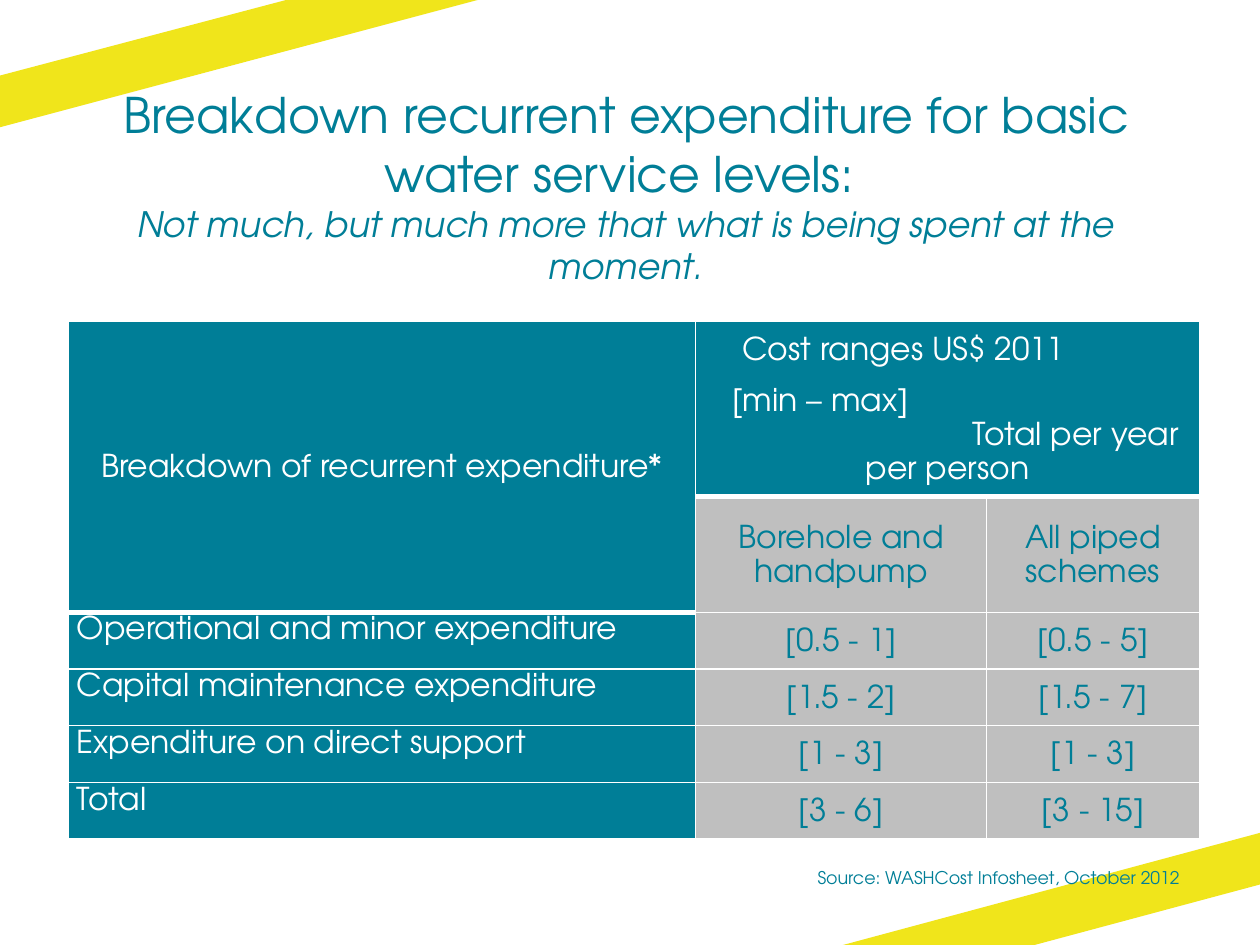
"""Build the slide on recurrent expenditure for basic water service levels."""
import pptx
import pptx.util
import pptx.dml.color
import pptx.enum.text
import pptx.oxml
import pptx.oxml.ns

Inches, Pt = pptx.util.Inches, pptx.util.Pt
RGBColor = pptx.dml.color.RGBColor
ALIGN, ANCHOR = pptx.enum.text.PP_ALIGN, pptx.enum.text.MSO_ANCHOR
TEAL = RGBColor(0x00, 0x7E, 0x97)
YELLOW = RGBColor(0xF0, 0xE5, 0x1B)
GREY = RGBColor(0xBF, 0xBF, 0xBF)
WHITE = RGBColor(0xFF, 0xFF, 0xFF)
FONT = "TeX Gyre Adventor"
WIDTH, HEIGHT = 10, 7.5

BANDS = [
    [(2.27, 0), (0, 0.6), (0, 1.01), (3.79, 0)],
    [(6.69, HEIGHT), (8.21, HEIGHT), (WIDTH, 7.02), (WIDTH, 6.61)],
]
TITLE = [
    ("Breakdown recurrent expenditure for basic water service levels: ", 28, False),
    ("Not much, but much more that what is being spent at the moment.", 20, True),
]
SOURCE = "Source: WASHCost Infosheet, October 2012"
ROW_HEADER = "Breakdown of recurrent expenditure*"
COST_HEADER = [
    ("Cost ranges US$ 2011", ALIGN.LEFT, 0.37, 10),
    ("[min – max]", ALIGN.LEFT, 0.29, 0),
    ("Total per year", ALIGN.LEFT, 2.2, 0),
    ("per person", ALIGN.CENTER, 0, 10),
]
SCHEMES = ["Borehole and handpump", "All piped schemes"]
COSTS = [
    ("Operational and minor expenditure", "[0.5 - 1]", "[0.5 - 5]"),
    ("Capital maintenance expenditure", "[1.5 - 2]", "[1.5 - 7]"),
    ("Expenditure on direct support", "[1 - 3]", "[1 - 3]"),
    ("Total", "[3 - 6]", "[3 - 15]"),
]
COLUMNS = [4.98, 2.31, 1.69]
ROWS = [1.39, 0.92] + [0.45] * len(COSTS)


def add_run(p, text, size, color, italic=False):
    r = p.add_run()
    r.text = text
    r.font.name, r.font.size, r.font.italic = FONT, Pt(size), italic
    r.font.color.rgb = color


def add_band(s, points):
    corners = [(Inches(x), Inches(y)) for x, y in points]
    builder = s.shapes.build_freeform(*corners[0])
    builder.add_line_segments(corners[1:], close=True)
    sp = builder.convert_to_shape()
    sp.shadow.inherit = False
    sp.fill.solid()
    sp.fill.fore_color.rgb = YELLOW
    sp.line.fill.background()


def add_text_frame(s, left, top, width, height):
    tf = s.shapes.add_textbox(*map(Inches, (left, top, width, height))).text_frame
    tf.word_wrap = True
    return tf


def set_borders(cell, bottom):
    tc_pr = cell._tc.get_or_add_tcPr()
    for index, (side, width) in enumerate([("L", 1), ("R", 1), ("T", 1), ("B", bottom)]):
        tc_pr.insert(index, pptx.oxml.parse_xml(
            f'<a:ln{side} {pptx.oxml.ns.nsdecls("a")} w="{Pt(width)}">'
            f'<a:solidFill><a:srgbClr val="{WHITE}"/></a:solidFill></a:ln{side}>'))


def fill_cell(cell, paragraphs, fill, color, inset=0, anchor=ANCHOR.MIDDLE):
    cell.fill.solid()
    cell.fill.fore_color.rgb = fill
    cell.margin_left = cell.margin_right = Inches(inset)
    cell.margin_top = cell.margin_bottom = 0
    cell.vertical_anchor = anchor
    tf = cell.text_frame
    for index, (text, align, indent, after) in enumerate(paragraphs):
        p = tf.add_paragraph() if index else tf.paragraphs[0]
        p.alignment, p.line_spacing, p.space_after = align, 1.15, Pt(after)
        if indent:
            p._p.get_or_add_pPr().set("marL", str(Inches(indent)))
        add_run(p, text, 18, color)


def add_cost_table(s):
    frame = s.shapes.add_table(len(ROWS), len(COLUMNS), Inches(0.54), Inches(2.55),
                               Inches(sum(COLUMNS)), Inches(sum(ROWS)))
    table = frame.table
    for column, width in zip(table.columns, COLUMNS):
        column.width = Inches(width)
    for row, height in zip(table.rows, ROWS):
        row.height = Inches(height)
    table.cell(0, 0).merge(table.cell(1, 0))
    table.cell(0, 1).merge(table.cell(0, 2))

    fill_cell(table.cell(0, 0), [(ROW_HEADER, ALIGN.CENTER, 0, 10)], TEAL, WHITE, 0.07)
    fill_cell(table.cell(0, 1), COST_HEADER, TEAL, WHITE)
    for c, scheme in enumerate(SCHEMES, 1):
        fill_cell(table.cell(1, c), [(scheme, ALIGN.CENTER, 0, 10)], GREY, TEAL)
    for r, (label, *ranges) in enumerate(COSTS, 2):
        fill_cell(table.cell(r, 0), [(label, ALIGN.LEFT, 0, 10)], TEAL, WHITE, 0.07, ANCHOR.TOP)
        for c, cost in enumerate(ranges, 1):
            fill_cell(table.cell(r, c), [(cost, ALIGN.CENTER, 0, 0)], GREY, TEAL)
    for r in range(len(ROWS)):
        for c in range(len(COLUMNS)):
            set_borders(table.cell(r, c), 3 if r == 0 or (r, c) == (1, 0) else 1)


def main():
    prs = pptx.Presentation()
    prs.slide_width, prs.slide_height = Inches(WIDTH), Inches(HEIGHT)
    s = prs.slides.add_slide(prs.slide_layouts[6])
    for points in BANDS:
        add_band(s, points)
    add_cost_table(s)

    tf = add_text_frame(s, 0.47, 0.84, 9, 1.26)
    tf.vertical_anchor = ANCHOR.MIDDLE
    for index, (text, size, italic) in enumerate(TITLE):
        p = tf.add_paragraph() if index else tf.paragraphs[0]
        p.alignment = ALIGN.CENTER
        add_run(p, text, size, TEAL, italic)

    tf = add_text_frame(s, 3.91, 6.88, 5.45, 0.24)
    tf.margin_left = tf.margin_right = tf.margin_top = tf.margin_bottom = 0
    p = tf.paragraphs[0]
    p.alignment = ALIGN.RIGHT
    add_run(p, SOURCE, 10, TEAL)
    prs.save("out.pptx")


if __name__ == "__main__":
    main()
